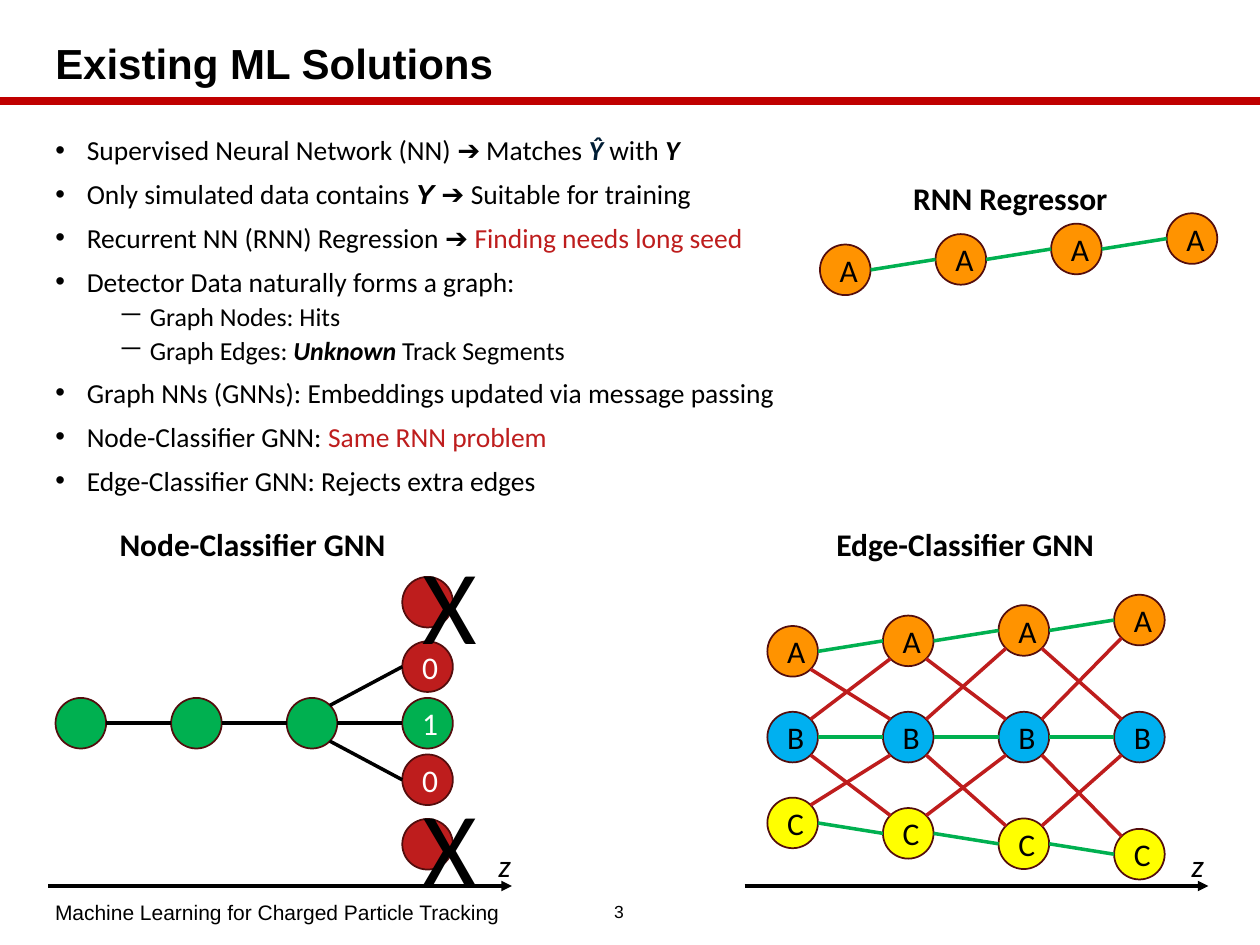
from pptx import Presentation
from pptx import util as u
from pptx.dml.color import RGBColor
from pptx.enum import shapes, text
from pptx.oxml import parse_xml
from pptx.oxml.ns import nsdecls

Cm = u.Cm
COLORS = {
    "black": "000000", "white": "FFFFFF", "rule": "C00000", "red": "BE1D1D",
    "green": "00B050", "orange": "FF9300", "blue": "00B0F0", "yellow": "FFFF00",
    "outline": "530D0D", "navy": "001D35",
}
RADIUS = 0.51
DIAG = 0.36  # offset of a node's corner points
COLUMN_STEP = 2.33
ROW_SLOPE = 0.21

EMPHASIS = {"bold": True, "italic": True}
RED = {"color": "red"}
# level, then runs of text with their own format
BULLETS = [
    (0, [("Supervised Neural Network (NN) ➔ Matches ", {}),
         ("Ŷ", {"color": "navy", **EMPHASIS}), (" with ", {}), ("Y", EMPHASIS)]),
    (0, [("Only simulated data contains ", {}), ("Y ", {"name": "Arial", **EMPHASIS}),
         ("➔ Suitable for training", {})]),
    (0, [("Recurrent NN (RNN) Regression ➔ ", {}), ("Finding needs long seed", RED)]),
    (0, [("Detector Data naturally forms a graph:", {})]),
    (1, [("Graph Nodes: Hits", {})]),
    (1, [("Graph Edges: ", {}), ("Unknown", EMPHASIS), (" Track Segments", {})]),
    (0, [("Graph NNs (GNNs): Embeddings updated via message passing", {})]),
    (0, [("Node-Classifier GNN: ", {}), ("Same RNN problem", RED)]),
    (0, [("Edge-Classifier GNN: Rejects extra edges", {})]),
]
LEVELS = [
    {"char": "•", "left": 0.25, "size": 15.7, "before": 10},
    {"char": "－", "left": 0.75, "size": 14.8, "before": 5},
]


def rgb(name):
    return RGBColor.from_string(COLORS[name])


def add_run(p, words, size, color="black", name="Calibri", **fmt):
    r = p.add_run()
    r.text = words
    for key, value in {"size": u.Pt(size), "name": name, **fmt}.items():
        setattr(r.font, key, value)
    r.font.color.rgb = rgb(color)


def place(sp, left, top, width, height):
    sp.left, sp.top, sp.width, sp.height = map(Cm, (left, top, width, height))


def add_label(s, words, box, size=18, wrap=False, align=text.PP_ALIGN.LEFT,
              anchor=text.MSO_ANCHOR.TOP, **fmt):
    tf = s.shapes.add_textbox(*map(Cm, box)).text_frame
    tf.word_wrap = wrap
    tf.vertical_anchor = anchor
    tf.paragraphs[0].alignment = align
    add_run(tf.paragraphs[0], words, size, **fmt)


def add_title(s, words):
    sp = s.shapes.title
    place(sp, 0.86, 0.66, 23.52, 1.35)
    tf = sp.text_frame
    tf.auto_size = text.MSO_AUTO_SIZE.NONE
    tf.vertical_anchor = text.MSO_ANCHOR.MIDDLE
    p = tf.paragraphs[0]
    p.alignment, p.line_spacing = text.PP_ALIGN.LEFT, 0.9
    add_run(p, words, 24, name="Arial", bold=True)


def add_bullets(s):
    sp = s.placeholders[1]
    place(sp, 0.86, 2.69, 15.49, 7.77)
    tf = sp.text_frame
    tf.auto_size = text.MSO_AUTO_SIZE.NONE
    for i, (level, runs) in enumerate(BULLETS):
        style = LEVELS[level]
        p = tf.add_paragraph() if i else tf.paragraphs[0]
        p.level, p.line_spacing = level, 0.8
        p.space_before = u.Pt(style["before"] if i else 0)
        pPr = p._p.get_or_add_pPr()
        pPr.set("marL", str(u.Inches(style["left"])))
        pPr.set("indent", str(u.Inches(-0.25)))
        pPr.append(parse_xml(f'<a:buChar {nsdecls("a")} char="{style["char"]}"/>'))
        for words, fmt in runs:
            add_run(p, words, style["size"], **fmt)


def add_line(s, start, end, color="black", width=2, arrow=False):
    line = s.shapes.add_connector(shapes.MSO_CONNECTOR.STRAIGHT,
                                  *map(Cm, (*start, *end)))
    line.line.color.rgb = rgb(color)
    line.line.width = u.Pt(width)
    if arrow:
        line.line._get_or_add_ln().append(
            parse_xml(f'<a:tailEnd {nsdecls("a")} type="triangle"/>'))
    line._element.spPr.append(parse_xml(f'<a:effectLst {nsdecls("a")}/>'))


def add_node(s, center, fill, label="", size=18, color="black"):
    x, y = center
    sp = s.shapes.add_shape(shapes.MSO_SHAPE.OVAL, Cm(x - RADIUS), Cm(y - RADIUS),
                            Cm(2 * RADIUS), Cm(2 * RADIUS))
    sp.shadow.inherit = False
    sp.fill.solid()
    sp.fill.fore_color.rgb = rgb(fill)
    sp.line.color.rgb = rgb("outline")
    sp.line.width = u.Pt(1)
    if label:
        p = sp.text_frame.paragraphs[0]
        p.alignment = text.PP_ALIGN.CENTER
        add_run(p, label, size, color)


def add_side_edge(s, a, b, color):
    """Join the right side of node a to the left side of node b."""
    add_line(s, (a[0] + RADIUS, a[1]), (b[0] - RADIUS, b[1]), color)


def add_cross_edge(s, a, b):
    """Join the facing corners of nodes a and b, with b to the right."""
    dy = DIAG if b[1] > a[1] else -DIAG
    add_line(s, (a[0] + DIAG, a[1] + dy), (b[0] - DIAG, b[1] - dy), "red")


def add_track(s, x, y, slope, fill, label="", edge="green", count=4):
    """Draw a chain of nodes and return their centres."""
    centers = [(x + i * COLUMN_STEP, y + i * slope) for i in range(count)]
    for center in centers:
        add_node(s, center, fill, label)
    for a, b in zip(centers, centers[1:]):
        add_side_edge(s, a, b, edge)
    return centers


def add_z_axis(s, left, label_left):
    add_line(s, (left, 17.86), (left + 9.35, 17.86), arrow=True)
    add_label(s, "z", (label_left, 16.94, 0.76, 1.02), wrap=True, italic=True)


def add_node_classifier(s):
    add_label(s, "Node-Classifier GNN", (2.16, 10.46, 5.92, 1.02), bold=True)
    y = 14.58
    last = add_track(s, 1.63, y, 0, "green", edge="black", count=3)[-1]
    x = last[0] + COLUMN_STEP
    add_node(s, (x, y), "green", "1", color="white")
    add_side_edge(s, last, (x, y), "black")
    for sign in (-1, 1):
        add_node(s, (x, y + sign * 1.14), "red", "0", color="white")
        add_line(s, (last[0] + DIAG, last[1] + sign * DIAG),
                 (x - RADIUS, y + sign * 1.14))
        add_node(s, (x, y + sign * 2.44), "red", "X", size=60)
    add_z_axis(s, 0.97, 9.8)


def add_edge_classifier(s):
    add_label(s, "Edge-Classifier GNN", (16.61, 10.46, 5.77, 1.02), bold=True)
    rows = [add_track(s, 15.98, 14.86 + side * 1.73, side * ROW_SLOPE, fill, label)
            for side, fill, label in ((-1, "orange", "A"), (0, "blue", "B"),
                                      (1, "yellow", "C"))]
    for upper, lower in zip(rows, rows[1:]):
        for i in range(len(upper) - 1):
            add_cross_edge(s, upper[i], lower[i + 1])
            add_cross_edge(s, lower[i], upper[i + 1])
    add_z_axis(s, 15.01, 23.77)


def main():
    prs = Presentation()
    prs.slide_width, prs.slide_height = Cm(25.4), Cm(19.05)
    s = prs.slides.add_slide(prs.slide_layouts[1])
    add_line(s, (0, 2.03), (25.4, 2.03), "rule", 4.5)
    add_title(s, "Existing ML Solutions")
    add_bullets(s)
    middle = {"wrap": True, "anchor": text.MSO_ANCHOR.MIDDLE, "name": "Arial"}
    add_label(s, "Machine Learning for Charged Particle Tracking",
              (0.86, 17.96, 10.87, 0.86), size=12, **middle)
    add_label(s, "3", (11.73, 17.96, 1.5, 0.84), size=10,
              align=text.PP_ALIGN.CENTER, **middle)
    add_label(s, "RNN Regressor", (18.16, 3.48, 4.47, 1.02), bold=True)
    add_track(s, 17.04, 5.44, -ROW_SLOPE, "orange", "A")
    add_node_classifier(s)
    add_edge_classifier(s)
    prs.save("out.pptx")


if __name__ == "__main__":
    main()
